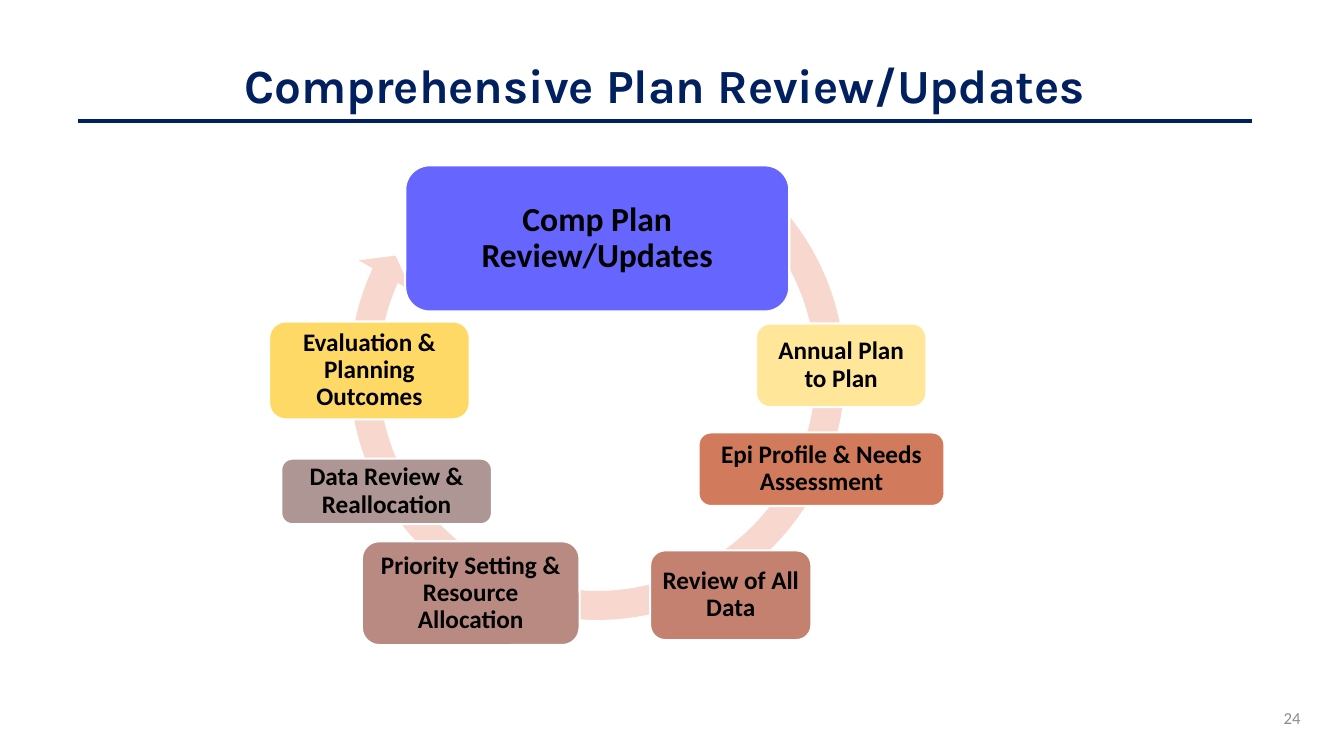
"""Build the Comprehensive Plan Review/Updates cycle slide on a grid of tenth-inch cells."""
from lxml.etree import SubElement
from pptx import Presentation
from pptx.dml.color import RGBColor
from pptx.enum.shapes import MSO_CONNECTOR, MSO_SHAPE
from pptx.enum.text import MSO_ANCHOR, PP_ALIGN
from pptx.oxml.ns import qn
from pptx.util import Inches, Pt

NAVY = RGBColor(0x00, 0x20, 0x60)
GRAY = RGBColor(0x8C, 0x8C, 0x8C)
BLACK = RGBColor(0x00, 0x00, 0x00)
WHITE = RGBColor(0xFF, 0xFF, 0xFF)
PEACH = RGBColor(0xF8, 0xD7, 0xCE)
BLUE = RGBColor(0x66, 0x66, 0xFF)
CREAM = RGBColor(0xFF, 0xE6, 0x99)
RUST = RGBColor(0xD1, 0x7B, 0x5C)
CLAY = RGBColor(0xC4, 0x81, 0x70)
ROSE = RGBColor(0xB9, 0x8A, 0x82)
TAUPE = RGBColor(0xAE, 0x96, 0x94)
GOLD = RGBColor(0xFF, 0xD9, 0x66)

CELL = Inches(0.1)
COLS, ROWS = 133.33, 75
LEFT, RIGHT = 7.7, 124.2


def cells(*counts):
    """Turn counts of grid cells into lengths."""
    return [round(n * CELL) for n in counts]


def write(s, lines, size, color, font="Calibri", bold=True,
          align=PP_ALIGN.CENTER, spacing=0.9, inset=None):
    """Fill a shape with one paragraph per line."""
    tf = s.text_frame
    tf.word_wrap = True
    tf.vertical_anchor = MSO_ANCHOR.MIDDLE
    if inset is not None:
        tf.margin_left = tf.margin_right = Inches(inset)
        tf.margin_top = tf.margin_bottom = Inches(inset)
    for i, line in enumerate(lines):
        p = tf.add_paragraph() if i else tf.paragraphs[0]
        p.alignment = align
        p.line_spacing = spacing
        r = p.add_run()
        r.text = line
        r.font.name = font
        r.font.size = Pt(size)
        r.font.bold = bold
        r.font.color.rgb = color


prs = Presentation()
prs.slide_width, prs.slide_height = cells(COLS, ROWS)
slide = prs.slides.add_slide(prs.slide_layouts[6])

title = slide.shapes.add_textbox(*cells(LEFT, 1.5, RIGHT - LEFT, 14.5))
write(title, ["Comprehensive Plan Review/Updates"], 34, NAVY, font="Karla")

number = slide.shapes.add_textbox(*cells(RIGHT, 69.2, 5.8, 4))
write(number, ["24"], 12, GRAY, bold=False, align=PP_ALIGN.RIGHT, spacing=1.0)

cycle = slide.shapes.add_shape(MSO_SHAPE.CIRCULAR_ARROW, *cells(33.1, 10.8, 52.3, 52.3))
cycle.shadow.inherit = False
cycle.fill.solid()
cycle.fill.fore_color.rgb = PEACH
cycle.line.fill.background()
for i, value in enumerate((0.055, 3.31, 122.73, 183.84, 0.058)):
    cycle.adjustments[i] = value

steps = [
    (40.2, 16.4, 38.1, 14.5, BLUE, 24, 0.1, ["Comp Plan Review/Updates"]),
    (75, 32.1, 16.9, 8.3, CREAM, 18, 0.07, ["Annual Plan to Plan"]),
    (69.3, 42.9, 24.4, 7.3, RUST, 18, 0.07, ["Epi Profile & Needs", "Assessment"]),
    (64.5, 54.6, 16, 8.9, CLAY, 18, 0.07, ["Review of All Data"]),
    (35.9, 53.7, 21.6, 10.3, ROSE, 18, 0.07, ["Priority Setting & Resource Allocation"]),
    (27.9, 45.5, 20.9, 6.5, TAUPE, 18, 0.07, ["Data Review & Reallocation"]),
    (26.7, 31.9, 19.9, 9.7, GOLD, 18, 0.07, ["Evaluation & Planning Outcomes"]),
]
for x, y, w, h, color, size, inset, lines in steps:
    s = slide.shapes.add_shape(MSO_SHAPE.ROUNDED_RECTANGLE, *cells(x, y, w, h))
    s.shadow.inherit = False
    s.fill.solid()
    s.fill.fore_color.rgb = color
    s.line.color.rgb = WHITE
    s.line.width = Pt(1.5)
    write(s, lines, size, BLACK, inset=inset)

rule = slide.shapes.add_connector(MSO_CONNECTOR.STRAIGHT, *cells(LEFT, 12, RIGHT, 12))
rule.line.color.rgb = NAVY
rule.line.width = Pt(2.5)
SubElement(rule._element.spPr, qn("a:effectLst"))

prs.save("out.pptx")
